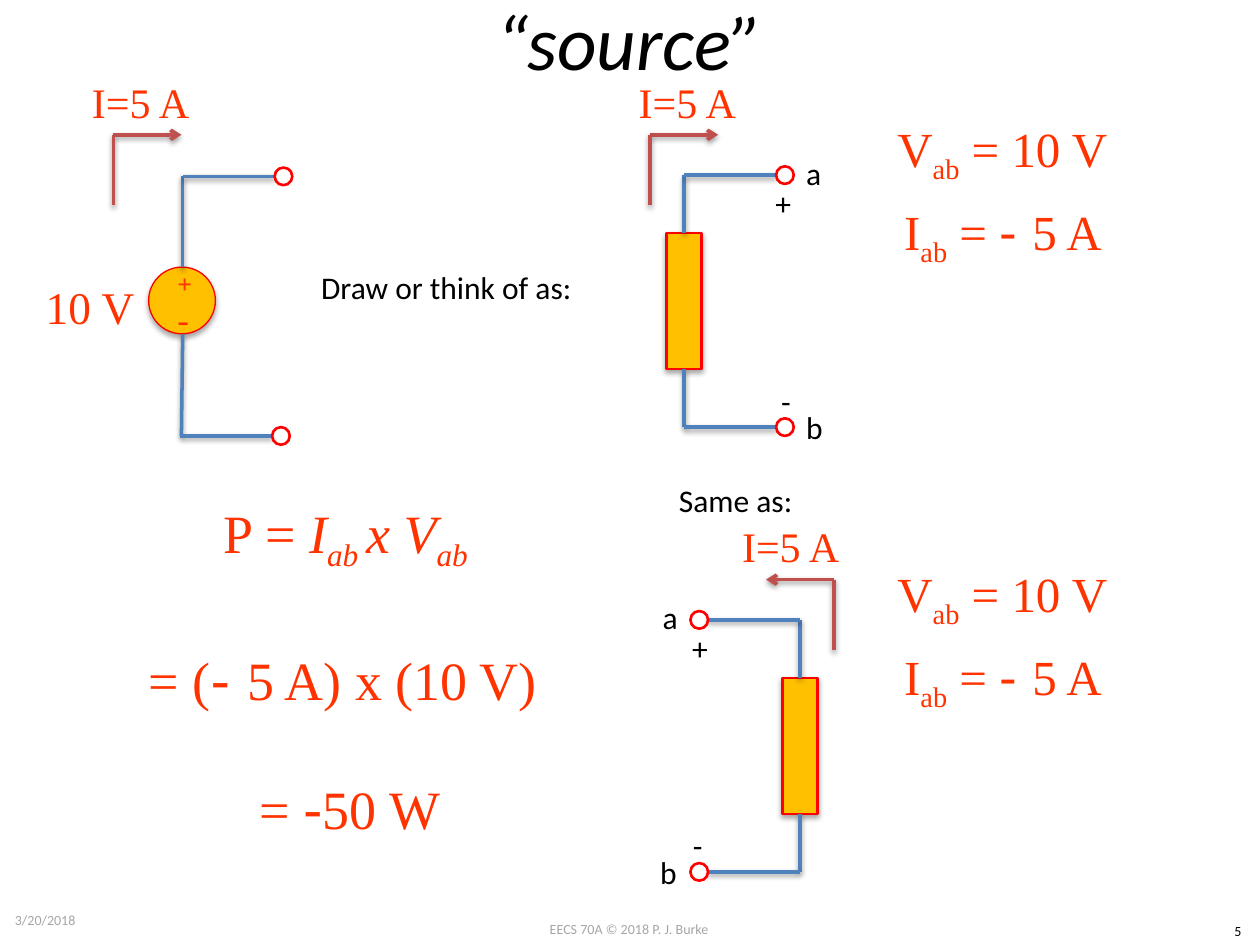
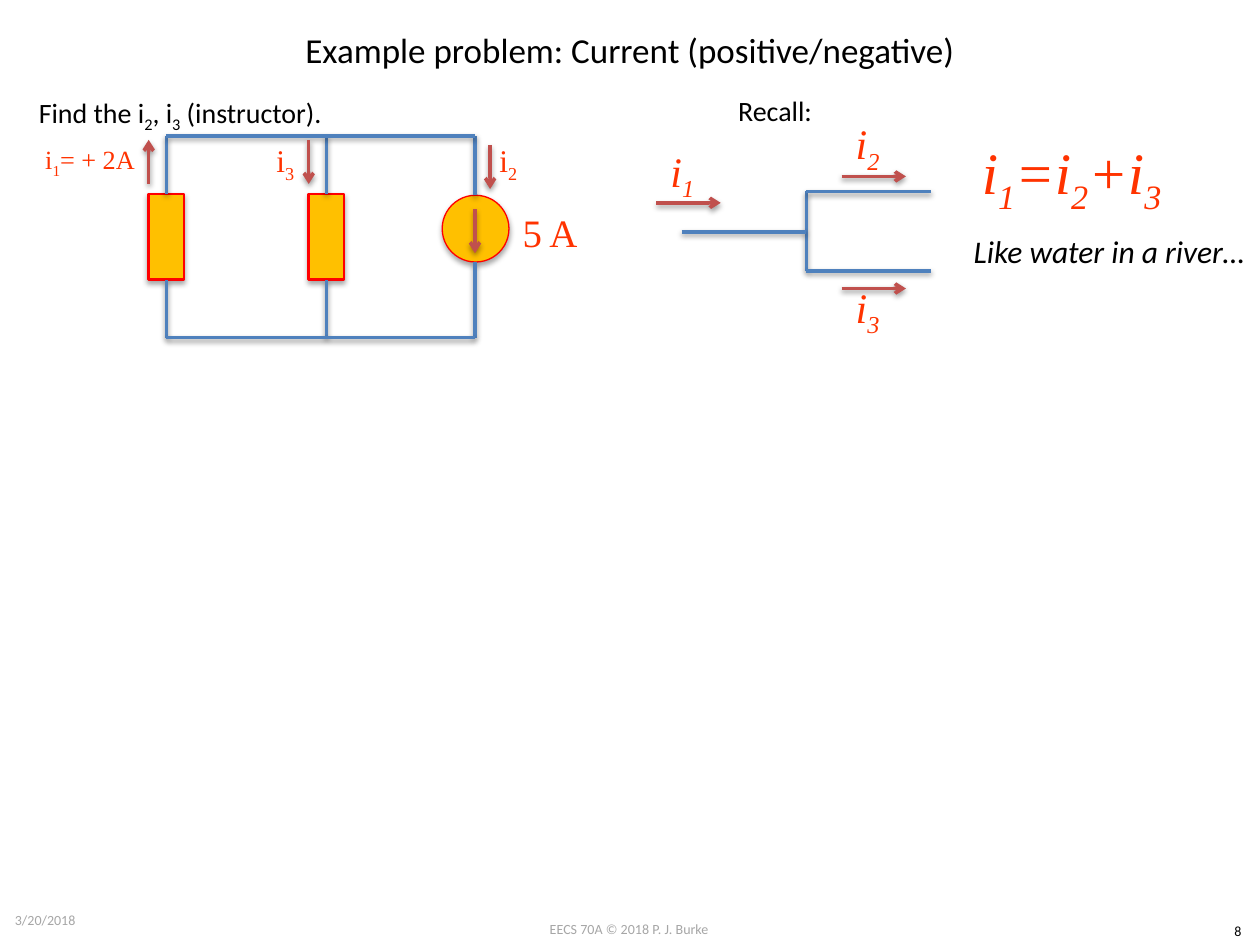
from lxml.etree import SubElement as Sub
from pptx import Presentation
from pptx.dml.color import RGBColor as RGB
from pptx.enum.shapes import MSO_CONNECTOR as Link, MSO_SHAPE as Form
from pptx.enum.text import MSO_ANCHOR as Anchor, PP_ALIGN as Align
from pptx.oxml.ns import qn
from pptx.util import Inches, Pt

BLACK = RGB(0, 0, 0)
GREY = RGB(0xA6, 0xA6, 0xA6)
INK = RGB(0xFF, 0x33, 0x00)
EDGE = RGB(0xFF, 0, 0)
GOLD = RGB(0xFF, 0xC0, 0x00)
WIRE = RGB(0x4F, 0x81, 0xBD)
FLOW = RGB(0xC0, 0x50, 0x4D)

STYLES = {
    "title": ("Calibri", BLACK, Align.CENTER, Anchor.MIDDLE, True),
    "note": ("Calibri", BLACK, Align.LEFT, Anchor.TOP, False),
    "math": ("Times New Roman", INK, Align.CENTER, Anchor.MIDDLE, True),
    "date": ("Calibri", GREY, Align.LEFT, Anchor.MIDDLE, True),
    "foot": ("Calibri", GREY, Align.CENTER, Anchor.TOP, True),
    "page": ("Calibri", BLACK, Align.CENTER, Anchor.TOP, True),
}

# Run flags: s = subscript, i = italic, d = minus-sign font.
VOLTS = [("V", ""), ("ab", "s"), (" = 10 V", "")]
AMPS = [("I", ""), ("ab", "s"), (" = ", ""), ("- ", "d"), ("5 A", "")]
POWER = [
    [("P = ", ""), ("I", "i"), ("ab ", "si"), ("x V", "i"), ("ab ", "si")],
    [("= (", ""), ("- ", "d"), ("5 A) x (10 V) ", "")],
    [("= ", ""), ("-", "d"), ("50 W", "")],
]
POWER_GAPS = (42, 37, 0)
FIND = [("Find the i", ""), ("2", "s"), (", i", ""), ("3", "s"), (" (instructor).", "")]
SUM = [("i", "i"), ("1", "si"), ("=i", "i"), ("2", "si"), ("+i", "i"), ("3", "si")]

# Each load: axis x, top y, side of its terminals, left of its current label.
LOADS = [(5.43, 1.39, 1, 4.86), (6.35, 4.92, -1, 5.68)]
# Each mark: text, centre from axis, top from terminal, width.
MARKS = [("a", 1.03, -0.22, 0.32), ("b", 1.04, 1.8, 0.34),
         ("+", 0.79, 0.02, 0.33), ("-", 0.81, 1.59, 0.28)]

SOURCE_NOTES = [
    ("note", (2.45, 2.08, 2.21, 0.4), "Draw or think of as:", 18),
    ("note", (5.29, 3.77, 1.11, 0.4), "Same as:", 18),
    ("math", (0.25, 2.12, 0.93, 0.62), "10 V", 25.9),
    ("math", (0.52, 0.44, 1.19, 0.73), "I=5 A", 24),
]
NODE_NOTES = [
    ("note", (0.21, 0.71, 2.57, 0.37), FIND, 16),
    ("note", (5.76, 0.69, 0.79, 0.37), "Recall:", 16),
    ("note", (7.63, 1.79, 2.37, 0.4), [("Like water in a river…", "i")], 18),
    ("math", (0.25, 1.02, 0.93, 0.52), [("i", ""), ("1", "s"), ("= + 2A", "")], 15),
    ("math", (1.8, 1.03, 0.93, 0.52), [("i", ""), ("3", "s")], 18),
    ("math", (3.57, 1.03, 0.93, 0.52), [("i", ""), ("2", "s")], 18),
    ("math", (4.04, 1.61, 0.65, 0.47), "5 A", 22.2),
    ("math", (7.59, 0.97, 1.83, 0.85), SUM, 33.6),
]
# Each river arrow: left, y, index, left and top of its label.
RIVERS = [(5.21, 1.61, "1", 5.07, 1.11), (6.68, 1.4, "2", 6.54, 0.89),
          (6.68, 2.29, "3", 6.54, 2.19)]


def fill_line(par, runs, size, font, color):
    for words, flags in runs:
        run = par.add_run()
        run.text = words
        face = run.font
        face.size = Pt(size)
        face.name = "DejaVu Sans" if "d" in flags else font
        face.color.rgb = color
        face.italic = "i" in flags
        face.bold = "b" in flags
        if "s" in flags:
            run._r.get_or_add_rPr().set("baseline", "-25000")


def text(slide, style, box, runs, size, gaps=(0,)):
    font, color, align, anchor, wrap = STYLES[style]
    frame = slide.shapes.add_textbox(*map(Inches, box)).text_frame
    frame.word_wrap = wrap
    frame.vertical_anchor = anchor
    if isinstance(runs, str):
        runs = [(runs, "")]
    lines = runs if isinstance(runs[0], list) else [runs]
    for i, (line, gap) in enumerate(zip(lines, gaps)):
        par = frame.add_paragraph() if i else frame.paragraphs[0]
        par.alignment = align
        par.space_after = Pt(gap)
        fill_line(par, line, size, font, color)


def shade(shape, alpha, dist):
    effect = Sub(shape.element.spPr, qn("a:effectLst"))
    cast = Sub(effect, qn("a:outerShdw"), blurRad=str(Pt(3.1)), dist=str(Pt(dist)),
               dir="5400000", rotWithShape="0")
    tone = Sub(cast, qn("a:srgbClr"), val="000000")
    Sub(tone, qn("a:alpha"), val=str(alpha * 1000))


def wire(slide, x1, y1, x2, y2, color=WIRE, arrow=False):
    line = slide.shapes.add_connector(Link.STRAIGHT, *map(Inches, (x1, y1, x2, y2)))
    line.line.color.rgb = color
    line.line.width = Pt(2)
    if arrow:
        Sub(line.element.spPr.get_or_add_ln(), qn("a:tailEnd"), type="arrow")
    shade(line, 38, 1.6)


def flow(slide, x1, y1, x2, y2):
    wire(slide, x1, y1, x2, y2, FLOW, True)


def part(slide, form, box, width=1.5, solid=True):
    shape = slide.shapes.add_shape(form, *map(Inches, box))
    shape.line.color.rgb = EDGE
    shape.line.width = Pt(width)
    if solid:
        shape.fill.solid()
        shape.fill.fore_color.rgb = GOLD
        shade(shape, 35, 1.8)
    else:
        shape.fill.background()
        shape.shadow.inherit = False


def block(slide, x, top, end):
    part(slide, Form.RECTANGLE, (x - 0.14, top, 0.28, end - top))


def supply(slide, x, top):
    part(slide, Form.OVAL, (x - 0.26, top, 0.53, 0.53), 0.75)


def term(slide, x, y, side):
    end = x + 0.73 * side
    wire(slide, end, y, x, y)
    part(slide, Form.OVAL, (end + 0.07 * side - 0.07, y - 0.07, 0.14, 0.14), solid=False)


def bend(slide, start, end, y):
    flow(slide, start, y, end, y)
    wire(slide, start, y + 0.56, start, y, FLOW)


def load(slide, x, top, side, label):
    block(slide, x, top + 0.46, top + 1.54)
    for y, inner in ((top, top + 0.46), (top + 2, top + 1.54)):
        wire(slide, x, y, x, inner)
        term(slide, x, y, side)
    bend(slide, x - 0.27 * side, x + 0.27 * side, top - 0.32)
    for mark, off, drop, width in MARKS:
        text(slide, "note", (x + off * side - width / 2, top + drop, width, 0.4), mark, 18)
    text(slide, "math", (label, top - 0.95, 1.19, 0.73), "I=5 A", 24)
    text(slide, "math", (6.97, top - 0.47, 1.97, 0.57), VOLTS, 28)
    text(slide, "math", (6.62, top + 0.19, 2.68, 0.57), AMPS, 28)


def start(deck, title, box, size, page):
    slide = deck.slides.add_slide(deck.slide_layouts[6])
    text(slide, "foot", (3.83, 7.26, 2.33, 0.24), "EECS 70A © 2018 P. J. Burke", 8)
    text(slide, "page", (9.65, 7.27, 0.35, 0.24), page, 8)
    text(slide, "date", (0.02, 7.1, 2.33, 0.4), "3/20/2018", 8)
    text(slide, "title", box, title, size)
    return slide


def draw_source(deck):
    slide = start(deck, [("“source”", "i")], (0.5, -0.31, 9, 1.25), 44, "5")
    supply(slide, 1.44, 2.12)
    text(slide, "math", (1.31, 2.08, 0.26, 0.33), [("+", "b")], 14.8)
    text(slide, "math", (1.31, 2.36, 0.26, 0.33), "-", 20)
    wire(slide, 1.44, 3.46, 1.45, 2.65)
    wire(slide, 1.45, 2.12, 1.45, 1.4)
    term(slide, 1.45, 1.4, 1)
    term(slide, 1.43, 3.46, 1)
    bend(slide, 0.9, 1.44, 1.07)
    for item in LOADS:
        load(slide, *item)
    for note in SOURCE_NOTES:
        text(slide, *note)
    text(slide, "math", (0.52, 4.17, 4.51, 2.29), POWER, 30.8, POWER_GAPS)


def draw_node(deck):
    title = "Example problem: Current (positive/negative)"
    slide = start(deck, title, (0.5, 0, 9, 0.78), 20, "8")
    top, end = 1.08, 2.68
    for x in (1.32, 2.59):
        block(slide, x, 1.54, 2.22)
        wire(slide, x, end, x, 2.22)
        wire(slide, x, 1.54, x, top)
    supply(slide, 3.77, 1.55)
    wire(slide, 3.77, 2.08, 3.77, end)
    wire(slide, 3.77, 1.55, 3.77, top)
    for y in (top, end):
        wire(slide, 1.32, y, 3.77, y)
    for x, y1, y2 in ((1.18, 1.46, 1.11), (2.45, 1.11, 1.46),
                      (3.77, 1.66, 2.01), (3.89, 1.15, 1.5)):
        flow(slide, x, y1, x, y2)
    wire(slide, 6.4, 2.15, 6.4, 1.52)
    for x, y in ((5.41, 1.84), (6.4, 1.52), (6.4, 2.15)):
        wire(slide, x, y, x + 0.99, y)
    for x, y, index, left, high in RIVERS:
        flow(slide, x, y, x + 0.51, y)
        text(slide, "math", (left, high, 0.69, 0.54), [("i", "i"), (index, "si")], 24)
    for note in NODE_NOTES:
        text(slide, *note)


def main():
    deck = Presentation()
    deck.slide_width, deck.slide_height = Inches(10), Inches(7.5)
    draw_source(deck)
    draw_node(deck)
    deck.save("out.pptx")


if __name__ == "__main__":
    main()
